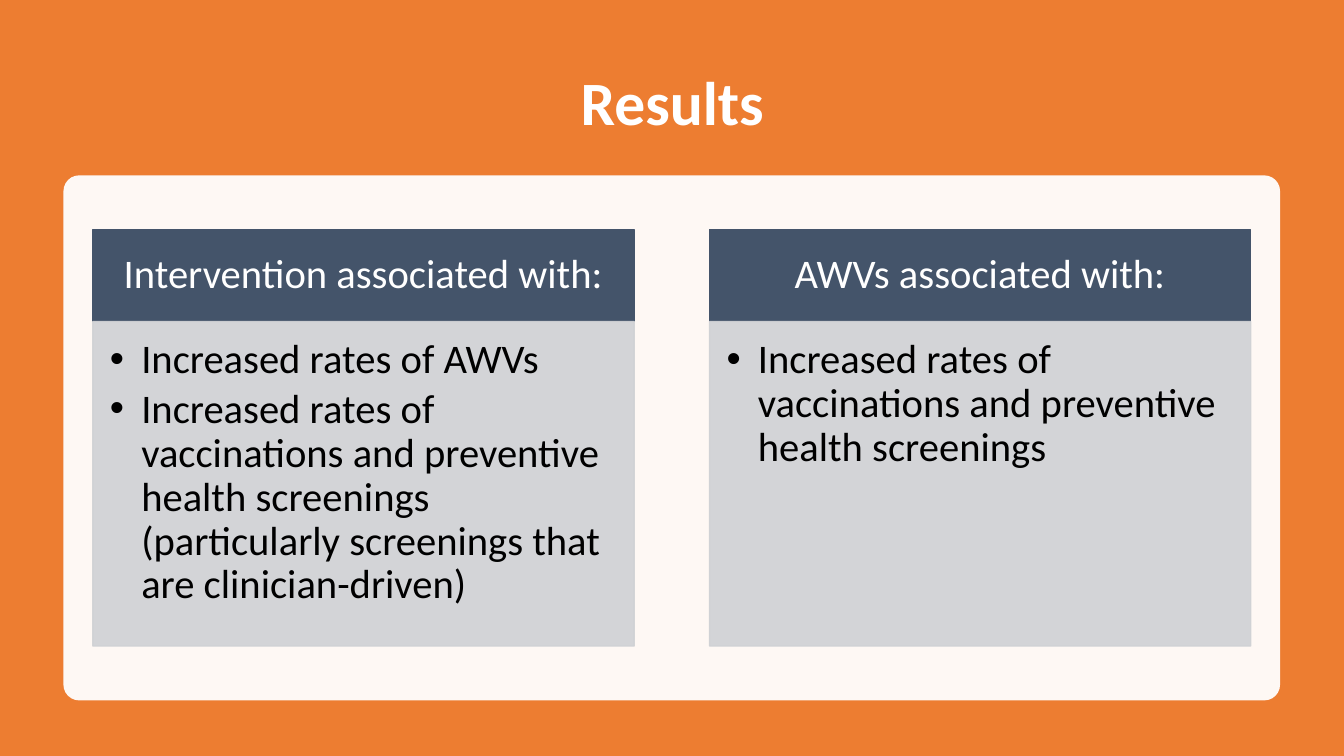
import lxml.etree
import pptx
import pptx.dml.color
import pptx.enum.shapes
import pptx.enum.text
import pptx.oxml.ns
import pptx.util

Cm = pptx.util.Cm
Pt = pptx.util.Pt
RGBColor = pptx.dml.color.RGBColor
Anchor = pptx.enum.text.MSO_ANCHOR
Align = pptx.enum.text.PP_ALIGN
Shape = pptx.enum.shapes.MSO_SHAPE

ORANGE = RGBColor(0xED, 0x7D, 0x31)
WHITE = RGBColor(0xFF, 0xFF, 0xFF)
BLACK = RGBColor(0x00, 0x00, 0x00)
SLATE = RGBColor(0x44, 0x54, 0x6A)
GREY = RGBColor(0xCF, 0xD1, 0xD4)

FONT = "Calibri"
SLIDE_WIDTH, SLIDE_HEIGHT = 33.87, 19.05
COMPARISON_LAYOUT = 4
COLUMN_LEFT, COLUMN_WIDTH, COLUMN_STEP = 2.34, 13.64, 15.54
HEADING_TOP, HEADING_HEIGHT = 5.79, 2.31
LIST_HEIGHT = 8.18
LIST_INDENT = 0.79

COLUMNS = [
    ("Intervention associated with:", [
        "Increased rates of AWVs",
        "Increased rates of vaccinations and preventive health screenings "
        "(particularly screenings that are clinician-driven)",
    ]),
    ("AWVs associated with:", [
        "Increased rates of vaccinations and preventive health screenings",
    ]),
]


def paint(fill, color, opacity=100):
    fill.solid()
    fill.fore_color.rgb = color
    if opacity < 100:
        for node in fill._xPr.iter(pptx.oxml.ns.qn("a:srgbClr")):
            alpha = lxml.etree.SubElement(node, pptx.oxml.ns.qn("a:alpha"))
            alpha.set("val", str(opacity * 1000))


def add_backdrop(page, kind, bounds, color, opacity=100):
    shape = page.shapes.add_shape(kind, *map(Cm, bounds))
    shape.shadow.inherit = False
    paint(shape.fill, color, opacity)
    shape.line.fill.background()
    page.shapes.title.element.addprevious(shape.element)
    return shape


def place(box, bounds, anchor, insets):
    box.left, box.top, box.width, box.height = map(Cm, bounds)
    frame = box.text_frame
    frame.word_wrap = True
    frame.auto_size = pptx.enum.text.MSO_AUTO_SIZE.NONE
    frame.vertical_anchor = anchor
    (frame.margin_left, frame.margin_top,
     frame.margin_right, frame.margin_bottom) = map(Cm, insets)


def set_bullet(para):
    properties = para._p.get_or_add_pPr()
    properties.set("marL", str(Cm(LIST_INDENT)))
    properties.set("indent", str(-Cm(LIST_INDENT)))
    bullet = lxml.etree.SubElement(properties, pptx.oxml.ns.qn("a:buChar"))
    bullet.set("char", "•")


def write(box, lines, size, color, align, bold=False, bulleted=False):
    box.text_frame.text = "\n".join(lines)
    for para in box.text_frame.paragraphs:
        if bulleted:
            set_bullet(para)
        para.alignment = align
        para.line_spacing = 0.9
        para.space_before = Pt(0)
        para.space_after = Pt(4.35 if bulleted else 0)
        para.font.name = FONT
        para.font.size = Pt(size)
        para.font.bold = bold
        para.font.color.rgb = color


def fill_box(box, color, opacity=100):
    paint(box.fill, color, opacity)
    paint(box.line.fill, color, opacity)
    box.line.width = Pt(1)


def fill_column(heading, listing, left, title, items):
    place(heading, (left, HEADING_TOP, COLUMN_WIDTH, HEADING_HEIGHT),
          Anchor.MIDDLE, (0.58, 0.33, 0.58, 0.33))
    fill_box(heading, SLATE)
    write(heading, [title], 29, WHITE, Align.CENTER)

    place(listing, (left, HEADING_TOP + HEADING_HEIGHT, COLUMN_WIDTH, LIST_HEIGHT),
          Anchor.TOP, (0.43, 0.43, 0.58, 0.64))
    fill_box(listing, GREY, 90)
    write(listing, items, 29, BLACK, Align.LEFT, bulleted=True)


def main():
    deck = pptx.Presentation()
    deck.slide_width, deck.slide_height = Cm(SLIDE_WIDTH), Cm(SLIDE_HEIGHT)
    page = deck.slides.add_slide(deck.slide_layouts[COMPARISON_LAYOUT])

    add_backdrop(page, Shape.RECTANGLE, (0, 0, SLIDE_WIDTH, SLIDE_HEIGHT), ORANGE)
    panel = add_backdrop(page, Shape.ROUNDED_RECTANGLE,
                         (1.6, 4.42, 30.66, 13.23), WHITE, 95)
    panel.adjustments[0] = 0.03

    title = page.shapes.title
    place(title, (2.34, 1.27, 29.21, 2.79), Anchor.MIDDLE, (0.25, 0.13, 0.25, 0.13))
    write(title, ["Results"], 44, WHITE, Align.CENTER, bold=True)

    boxes = list(page.placeholders)[1:]
    for index, (heading, items) in enumerate(COLUMNS):
        fill_column(boxes[2 * index], boxes[2 * index + 1],
                    COLUMN_LEFT + index * COLUMN_STEP, heading, items)

    deck.save("out.pptx")


if __name__ == "__main__":
    main()
